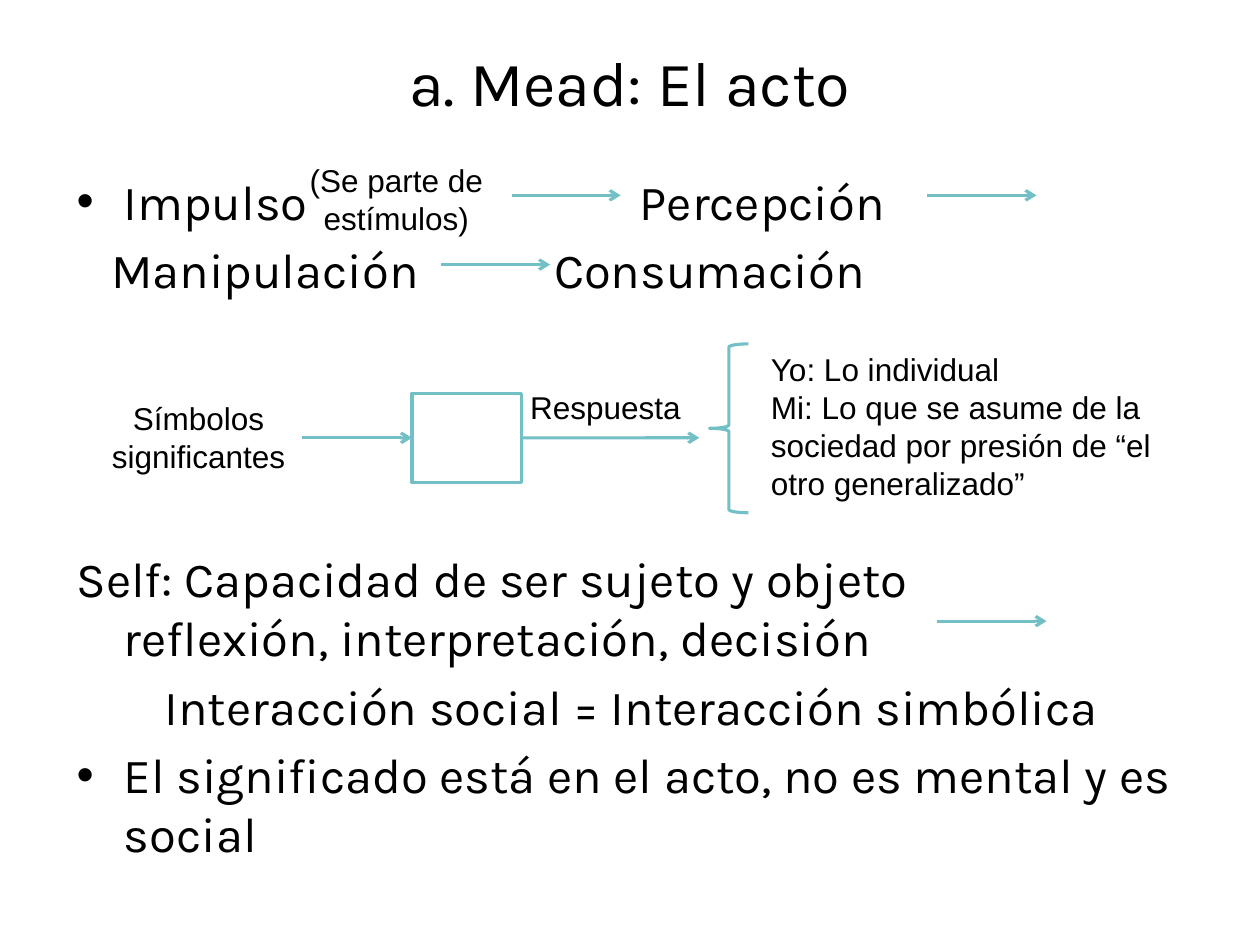
from dataclasses import dataclass

from lxml import etree
from pptx import Presentation
from pptx.dml.color import RGBColor
from pptx.enum.shapes import MSO_CONNECTOR, MSO_SHAPE
from pptx.enum.text import MSO_ANCHOR, MSO_AUTO_SIZE, PP_ALIGN
from pptx.oxml.ns import qn
from pptx.shapes.autoshape import Shape
from pptx.shapes.connector import Connector
from pptx.slide import Slide
from pptx.text.text import TextFrame
from pptx.util import Inches, Pt

STRAIGHT = MSO_CONNECTOR.STRAIGHT
RECTANGLE, LEFT_BRACE = MSO_SHAPE.RECTANGLE, MSO_SHAPE.LEFT_BRACE
LEFT, CENTER = PP_ALIGN.LEFT, PP_ALIGN.CENTER
MIDDLE, TOP = MSO_ANCHOR.MIDDLE, MSO_ANCHOR.TOP
GROW, FIXED = MSO_AUTO_SIZE.SHAPE_TO_FIT_TEXT, MSO_AUTO_SIZE.NONE
LEFT_SIDE, RIGHT_SIDE = 1, 3
PAGE_WIDTH, PAGE_HEIGHT = Inches(10), Inches(7.5)


@dataclass(frozen=True)
class Theme:
    ink: RGBColor = RGBColor(0x00, 0x00, 0x00)
    accent: RGBColor = RGBColor(0x72, 0xBF, 0xC5)
    main_font: str = "Karla"
    label_font: str = "Arial"
    title_size: float = 36
    body_size: float = 28
    label_size: float = 18
    line_width: float = 1.75


@dataclass(frozen=True)
class Area:
    left: float
    top: float
    width: float
    height: float

    def lengths(self) -> tuple[int, int, int, int]:
        return across(self.left), down(self.top), across(self.width), down(self.height)


@dataclass(frozen=True)
class Para:
    text: str
    align: PP_ALIGN = LEFT
    before: float = 0
    margin: float = 0
    hanging: float = 0
    bullet: str = ""
    tab: float = 0


@dataclass(frozen=True)
class Label:
    area: Area
    paras: tuple[Para, ...]


@dataclass(frozen=True)
class Arrow:
    left: float
    top: float
    length: float = 8.66


THEME = Theme()
INDENT = 3.75
GAP = 5.6
DIAGRAM_GAP = 142.8
TITLE_AREA = Area(5, 4, 90, 9.2)
BODY = Label(Area(5.1, 17.47, 90, 78.8), (
    Para("Impulso\tPercepción", margin=INDENT, hanging=INDENT, bullet="•", tab=44.7),
    Para("Manipulación", before=GAP, margin=2.75),
    Para("Self: Capacidad de ser sujeto y objeto\vreflexión, interpretación, decisión",
         before=DIAGRAM_GAP, margin=INDENT, hanging=INDENT),
    Para("Interacción social = Interacción simbólica", CENTER, GAP),
    Para("El significado está en el acto, no es mental y es social",
         before=GAP, margin=INDENT, hanging=INDENT, bullet="•"),
))
CONSUMMATION = Label(Area(43, 24.67, 28, 7.6), (Para("Consumación"),))
STIMULI = Label(Area(23.2, 16.4, 16.5, 9.47), (Para("(Se parte de estímulos)", CENTER),))
SYMBOLS = Label(Area(7.5, 41.6, 16.5, 9.47), (Para("Símbolos significantes", CENTER),))
RESPONSE = Label(Area(39.8, 40.4, 16.5, 5.33), (Para("Respuesta", CENTER),))
SELF_PARTS = Label(Area(60.2, 36.4, 32.3, 17.47), (
    Para("Yo: Lo individual"),
    Para("Mi: Lo que se asume de la sociedad por presión de “el otro generalizado”"),
))
MIND_AREA = Area(32.7, 41.6, 8.66, 9.47)
BRACE_AREA = Area(56.3, 36.4, 3.1, 17.87)
FREE_ARROWS = (Arrow(40.6, 20.67), Arrow(35, 28), Arrow(73.6, 20.67), Arrow(74.4, 65.73))
TO_MIND = Arrow(24, 46.33)
FROM_MIND = Arrow(41.36, 46.33, 14.14)


def across(share: float) -> int:
    return round(PAGE_WIDTH * share / 100)


def down(share: float) -> int:
    return round(PAGE_HEIGHT * share / 100)


def apply(target: object, values: dict) -> None:
    for name, value in values.items():
        setattr(target, name, value)


def fill_frame(frame: TextFrame, paras: tuple[Para, ...], font: str, size: float) -> None:
    for index, item in enumerate(paras):
        para = frame.paragraphs[0] if index == 0 else frame.add_paragraph()
        para.text = item.text
        apply(para, {"alignment": item.align, "space_before": Pt(item.before)})
        properties = para._p.get_or_add_pPr()
        properties.set("marL", str(across(item.margin)))
        properties.set("indent", str(-across(item.hanging)))
        if item.bullet:
            etree.SubElement(properties, qn("a:buFont"), typeface=THEME.label_font)
            etree.SubElement(properties, qn("a:buChar"), char=item.bullet)
        else:
            etree.SubElement(properties, qn("a:buNone"))
        if item.tab:
            tabs = etree.SubElement(properties, qn("a:tabLst"))
            etree.SubElement(tabs, qn("a:tab"), pos=str(across(item.tab)), algn="l")
        for span in para.runs:
            apply(span.font, {"name": font, "size": Pt(size)})
            span.font.color.rgb = THEME.ink


def add_label(page: Slide, label: Label, font: str = THEME.label_font,
              size: float = THEME.label_size, auto_size: MSO_AUTO_SIZE = GROW) -> Shape:
    box = page.shapes.add_textbox(*label.area.lengths())
    apply(box.text_frame, {"word_wrap": True, "auto_size": auto_size, "vertical_anchor": TOP})
    fill_frame(box.text_frame, label.paras, font, size)
    return box


def add_outline(page: Slide, kind: MSO_SHAPE, area: Area) -> Shape:
    shape = page.shapes.add_shape(kind, *area.lengths())
    shape.shadow.inherit = False
    shape.fill.background()
    shape.line.color.rgb = THEME.accent
    shape.line.width = Pt(THEME.line_width)
    return shape


def add_arrow(page: Slide, arrow: Arrow) -> Connector:
    height = down(arrow.top)
    line = page.shapes.add_connector(
        STRAIGHT, across(arrow.left), height, across(arrow.left + arrow.length), height)
    line.line.color.rgb = THEME.accent
    line.line.width = Pt(THEME.line_width)
    etree.SubElement(line.line._get_or_add_ln(), qn("a:tailEnd"), type="arrow")
    etree.SubElement(line._element.spPr, qn("a:effectLst"))
    return line


def add_title(page: Slide) -> None:
    title = page.shapes.title
    apply(title, dict(zip(("left", "top", "width", "height"), TITLE_AREA.lengths())))
    apply(title.text_frame, {"word_wrap": True, "auto_size": FIXED, "vertical_anchor": MIDDLE})
    fill_frame(title.text_frame, (Para("a. Mead: El acto", CENTER),),
               THEME.main_font, THEME.title_size)


def main() -> None:
    deck = Presentation()
    apply(deck, {"slide_width": PAGE_WIDTH, "slide_height": PAGE_HEIGHT})
    page = deck.slides.add_slide(deck.slide_layouts.get_by_name("Title Only"))
    add_title(page)
    for label in (BODY, CONSUMMATION):
        add_label(page, label, THEME.main_font, THEME.body_size, FIXED)
    for arrow in FREE_ARROWS:
        add_arrow(page, arrow)
    add_label(page, STIMULI)
    symbols = add_label(page, SYMBOLS)
    mind = add_outline(page, RECTANGLE, MIND_AREA)
    to_mind = add_arrow(page, TO_MIND)
    to_mind.begin_connect(symbols, RIGHT_SIDE)
    to_mind.end_connect(mind, LEFT_SIDE)
    add_arrow(page, FROM_MIND).begin_connect(mind, RIGHT_SIDE)
    add_label(page, RESPONSE)
    add_outline(page, LEFT_BRACE, BRACE_AREA)
    add_label(page, SELF_PARTS)
    deck.save("out.pptx")


if __name__ == "__main__":
    main()
